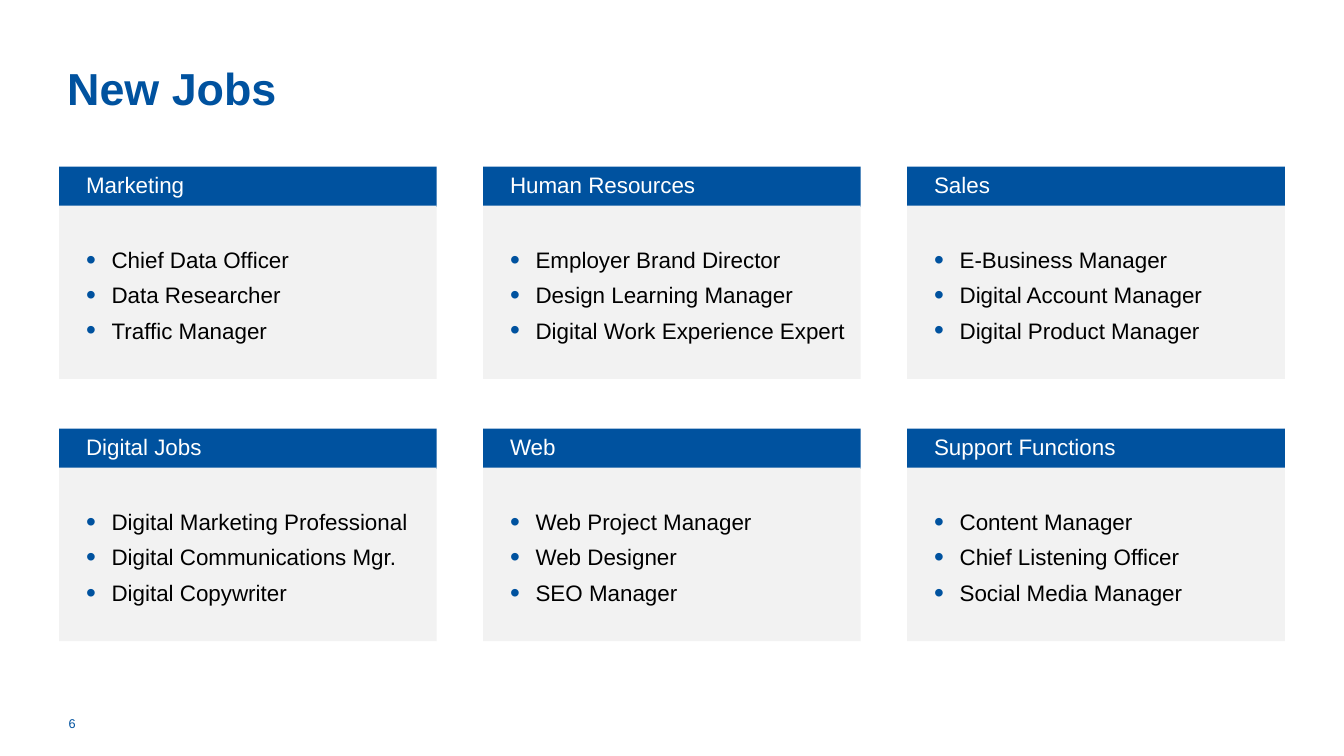
from dataclasses import dataclass

from lxml import etree
from pptx import Presentation
from pptx.dml.color import RGBColor
from pptx.enum.shapes import MSO_SHAPE
from pptx.enum.text import MSO_ANCHOR, PP_ALIGN
from pptx.oxml.ns import qn
from pptx.util import Inches, Pt

RECTANGLE = MSO_SHAPE.RECTANGLE
TOP, MIDDLE = MSO_ANCHOR.TOP, MSO_ANCHOR.MIDDLE
LEFT = PP_ALIGN.LEFT


@dataclass(frozen=True)
class Theme:
    font: str = "Arial"
    blue: str = "00529F"
    panel: str = "F2F2F2"
    white: str = "FFFFFF"
    black: str = "000000"
    title_size: float = 24
    text_size: float = 12
    number_size: float = 6.8


THEME = Theme()

# Widescreen page and card grid, in inches
SLIDE_WIDTH = 10
SLIDE_HEIGHT = SLIDE_WIDTH * 9 / 16
COLUMNS = 3
GRID_LEFT, GRID_TOP, GRID_WIDTH = 0.44, 1.24, 9.12
CARD_WIDTH, HEADER_HEIGHT, BODY_HEIGHT = 2.81, 0.3, 1.29
BODY_OFFSET = 0.29  # the list panel slightly overlaps its heading bar
ROW_STEP = 1.95
COLUMN_STEP = (GRID_WIDTH - CARD_WIDTH) / (COLUMNS - 1)
BULLET_INDENT = 0.19

JOBS = {
    "Marketing": ["Chief Data Officer", "Data Researcher", "Traffic Manager"],
    "Human Resources": ["Employer Brand Director", "Design Learning Manager",
                        "Digital Work Experience Expert"],
    "Sales": ["E-Business Manager", "Digital Account Manager",
              "Digital Product Manager"],
    "Digital Jobs": ["Digital Marketing Professional",
                     "Digital Communications Mgr.", "Digital Copywriter"],
    "Web": ["Web Project Manager", "Web Designer", "SEO Manager"],
    "Support Functions": ["Content Manager", "Chief Listening Officer",
                          "Social Media Manager"],
}


def add_bullet(paragraph):
    properties = paragraph._p.get_or_add_pPr()
    properties.set("marL", str(Inches(BULLET_INDENT)))
    properties.set("indent", str(-Inches(BULLET_INDENT)))
    color = etree.SubElement(properties, qn("a:buClr"))
    etree.SubElement(color, qn("a:srgbClr"), val=THEME.blue)
    etree.SubElement(properties, qn("a:buSzPct"), val="125000")
    etree.SubElement(properties, qn("a:buFont"), typeface=THEME.font)
    etree.SubElement(properties, qn("a:buChar"), char="•")


def write_text(shape, lines, *, size, color, bold=False, anchor=MIDDLE,
               insets=(0, 0, 0, 0), line_spacing=None, space_after=None,
               bullets=False):
    """Fill a shape with one paragraph per line; insets are left, top, right, bottom."""
    frame = shape.text_frame
    frame.word_wrap = True
    frame.vertical_anchor = anchor
    (frame.margin_left, frame.margin_top,
     frame.margin_right, frame.margin_bottom) = map(Inches, insets)
    for index, line in enumerate(lines):
        paragraph = frame.add_paragraph() if index else frame.paragraphs[0]
        if bullets:
            add_bullet(paragraph)
        paragraph.alignment = LEFT
        paragraph.line_spacing = line_spacing
        paragraph.space_after = space_after
        run = paragraph.add_run()
        run.text = line
        run.font.name = THEME.font
        run.font.size = Pt(size)
        run.font.bold = bold
        run.font.color.rgb = RGBColor.from_string(color)


def add_panel(slide, left, top, width, height, fill):
    panel = slide.shapes.add_shape(
        RECTANGLE, Inches(left), Inches(top), Inches(width), Inches(height))
    panel.shadow.inherit = False
    panel.fill.solid()
    panel.fill.fore_color.rgb = RGBColor.from_string(fill)
    panel.line.fill.background()
    return panel


def add_title(slide, text, left, top, width, height):
    title = slide.shapes.title
    title.left, title.top = Inches(left), Inches(top)
    title.width, title.height = Inches(width), Inches(height)
    write_text(title, [text], size=THEME.title_size, color=THEME.blue, bold=True)


def add_card(slide, heading, jobs, left, top, width):
    # Heading bar
    header = add_panel(slide, left, top, width, HEADER_HEIGHT, THEME.blue)
    write_text(header, [heading], size=THEME.text_size, color=THEME.white,
               insets=(0.2, 0, 0.16, 0), line_spacing=0.8)
    # Job list
    body = add_panel(slide, left, top + BODY_OFFSET, width, BODY_HEIGHT,
                     THEME.panel)
    write_text(body, jobs, size=THEME.text_size, color=THEME.black, anchor=TOP,
               insets=(0.2, 0.28, 0.04, 0.28), line_spacing=1.11,
               space_after=Pt(3), bullets=True)


def add_page_number(slide, number, left, top, width, height):
    box = slide.shapes.add_textbox(
        Inches(left), Inches(top), Inches(width), Inches(height))
    write_text(box, [number], size=THEME.number_size, color=THEME.blue,
               insets=(0, 0.05, 0.1, 0.05))


def main():
    presentation = Presentation()
    presentation.slide_width = Inches(SLIDE_WIDTH)
    presentation.slide_height = Inches(SLIDE_HEIGHT)
    title_only = presentation.slide_layouts[5]
    slide = presentation.slides.add_slide(title_only)

    add_title(slide, "New Jobs", 0.5, 0.27, 9, 0.77)
    for index, (heading, jobs) in enumerate(JOBS.items()):
        row, column = divmod(index, COLUMNS)
        add_card(slide, heading, jobs, GRID_LEFT + column * COLUMN_STEP,
                 GRID_TOP + row * ROW_STEP, CARD_WIDTH)
    add_page_number(slide, "6", 0.51, 5.23, 0.82, 0.3)

    presentation.save("out.pptx")


if __name__ == "__main__":
    main()
